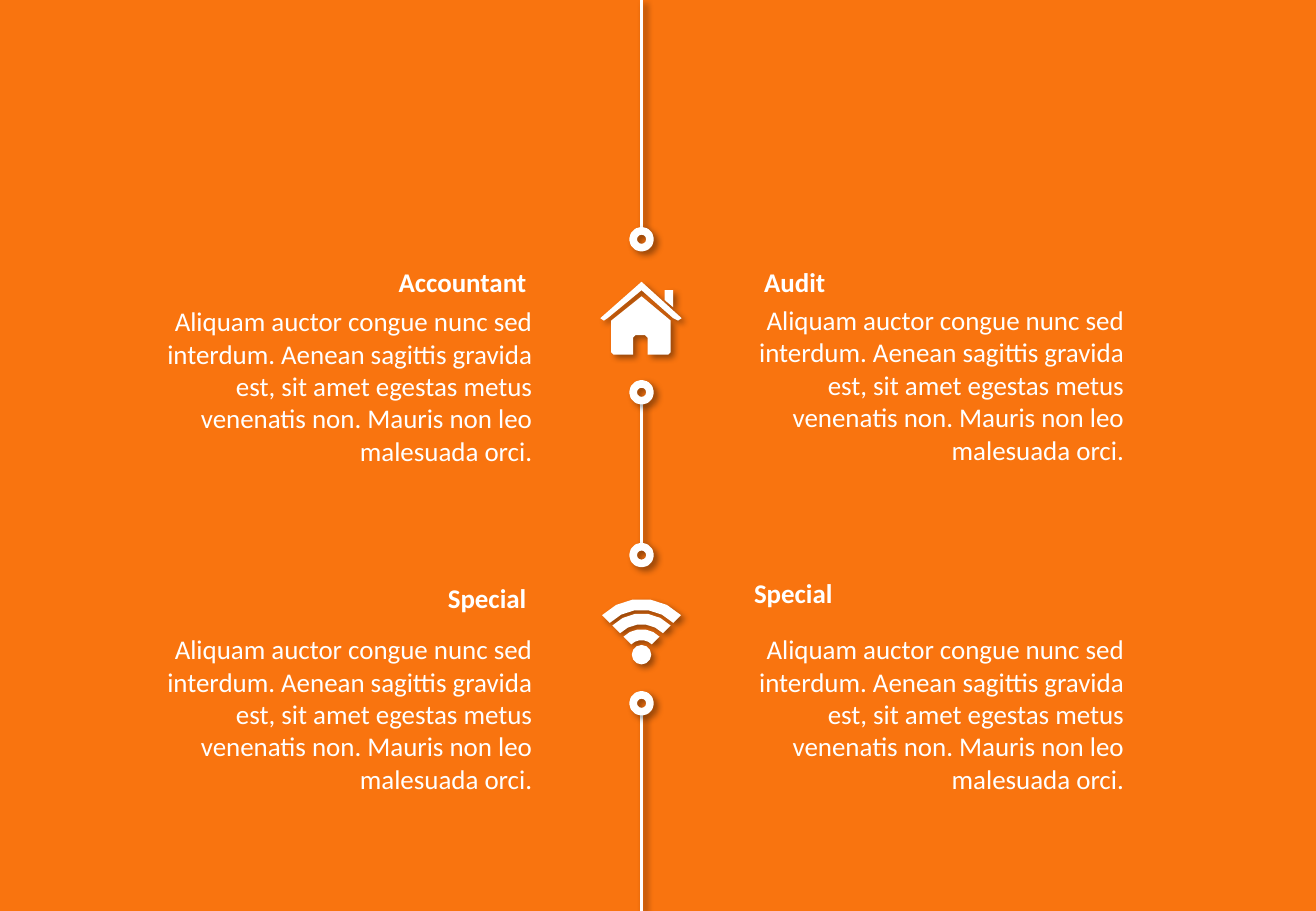
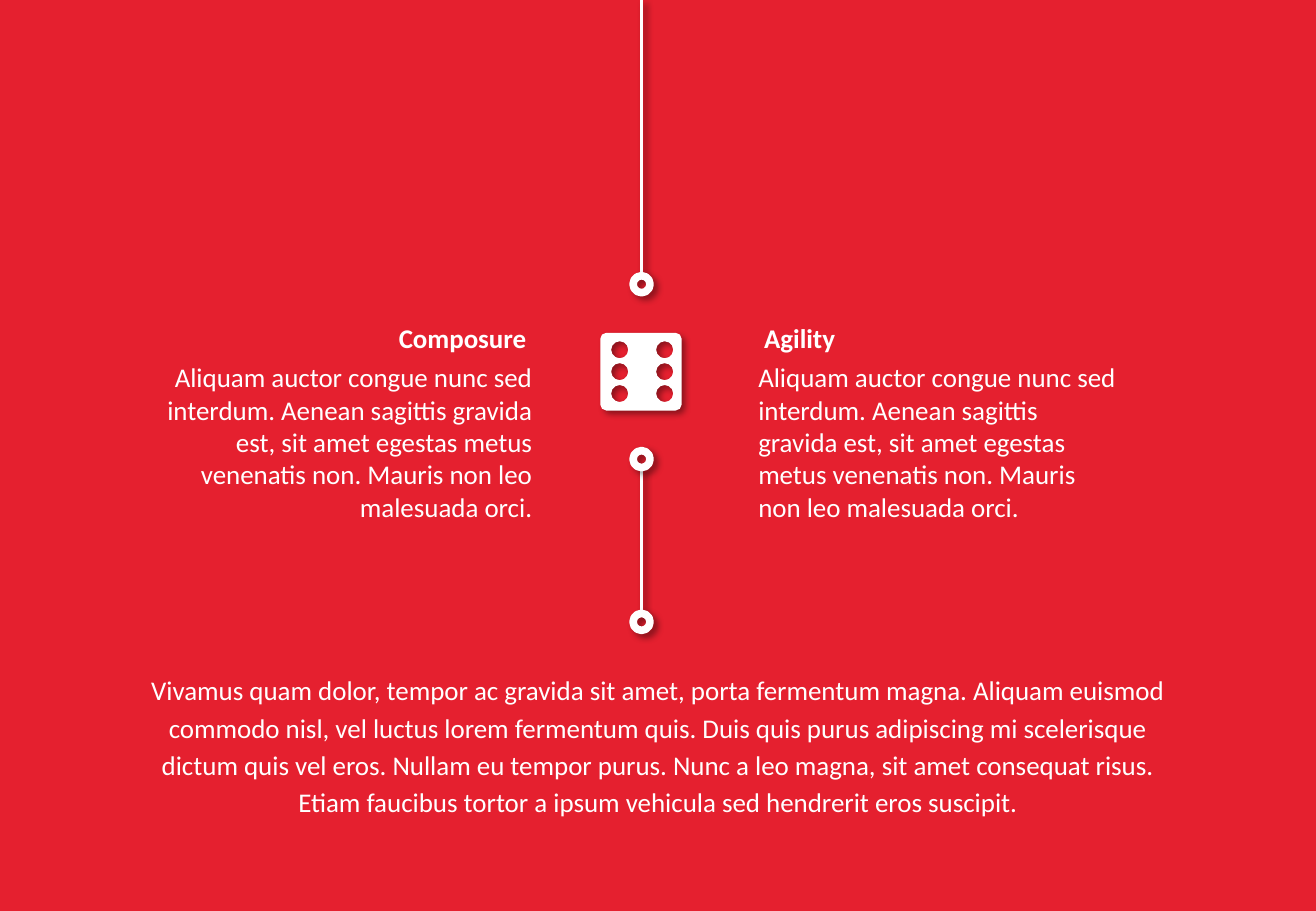
"""Build two coloured timeline slides with icons, headings and paragraphs."""
import dataclasses
import math

import lxml.etree
import pptx
import pptx.dml.color
import pptx.enum.shapes
import pptx.enum.text
import pptx.oxml.ns
import pptx.shapes.base
import pptx.slide
import pptx.util

Inches = pptx.util.Inches
Align = pptx.enum.text.PP_ALIGN
Point = tuple[float, float]
Contour = list[Point]

COLOURS = {"orange": "F9740F", "red": "E5202F", "white": "FFFFFF", "shadow": "000000"}
FONT = "Calibri"
FONT_SIZE = 16
AXIS = 5.28
RING = 0.14
LEFT_BODY, LEFT_HEADING, RIGHT = 1.31, 3.09, 6.19
LOREM = (
    "Aliquam auctor congue nunc sed interdum. Aenean sagittis gravida est, "
    "sit amet egestas metus venenatis non. Mauris non leo malesuada orci."
)
CLOSING = (
    "Vivamus quam dolor, tempor ac gravida sit amet, porta fermentum magna. "
    "Aliquam euismod commodo nisl, vel luctus lorem fermentum quis. "
    "Duis quis purus adipiscing mi scelerisque dictum quis vel eros. "
    "Nullam eu tempor purus. Nunc a leo magna, sit amet consequat risus. "
    "Etiam faucibus tortor a ipsum vehicula sed hendrerit eros suscipit."
)


@dataclasses.dataclass(frozen=True)
class TextBlock:
    text: str
    left: float
    top: float
    width: float
    height: float
    align: Align = Align.RIGHT
    bold: bool = False
    insets: Point = (0.05, 0.03)
    line_spacing: float | None = None
    space_after: float | None = None


@dataclasses.dataclass(frozen=True)
class Segment:
    top: float
    bottom: float
    ring_above: bool = True
    ring_below: bool = True


@dataclasses.dataclass(frozen=True)
class Timeline:
    background: str
    segments: list[Segment]
    icons: list[list[Contour]]
    blocks: list[TextBlock]


def heading(text: str, left: float, top: float, align: Align = Align.RIGHT) -> TextBlock:
    return TextBlock(text, left, top, 1.34, 0.37, align, bold=True, insets=(0.1, 0.05))


def body(left: float, top: float, width: float = 3.12, align: Align = Align.RIGHT) -> TextBlock:
    return TextBlock(LOREM, left, top, width, 1.4, align)


def arc(x: float, y: float, radius: float, start: float, end: float, steps: int) -> Contour:
    angles = [math.radians(start + (end - start) * step / steps) for step in range(steps + 1)]
    return [(x + radius * math.cos(angle), y + radius * math.sin(angle)) for angle in angles]


def circle(x: float, y: float, radius: float) -> Contour:
    return arc(x, y, radius, 360, 0, 12)[:-1]


def band(x: float, y: float, outer: float, inner: float) -> Contour:
    return arc(x, y, outer, -135, -45, 5) + arc(x, y, inner, -45, -135, 5)


def house() -> list[Contour]:
    walls = [
        (5.03, 2.64), (5.28, 2.44), (5.52, 2.64), (5.52, 2.9), (5.5, 2.92), (5.33, 2.92),
        (5.33, 2.78), (5.31, 2.76), (5.23, 2.76), (5.21, 2.78), (5.21, 2.92), (5.05, 2.92),
        (5.03, 2.9),
    ]
    chimney = [(5.47, 2.39), (5.54, 2.39), (5.54, 2.53), (5.47, 2.47)]
    roof = [
        (4.94, 2.62), (4.97, 2.64), (5, 2.62), (5.28, 2.39), (5.54, 2.62), (5.58, 2.64),
        (5.61, 2.62), (5.28, 2.32),
    ]
    return [walls, chimney, roof]


def wireless() -> list[Contour]:
    y = 5.39
    radii = [(0.46, 0.37), (0.34, 0.25), (0.21, 0.12)]
    return [circle(AXIS, y, 0.08)] + [band(AXIS, y, outer, inner) for outer, inner in radii]


def die() -> list[Contour]:
    left, top, right, bottom, radius = 4.94, 2.74, 5.61, 3.38, 0.05
    corners = [
        (right - radius, bottom - radius), (left + radius, bottom - radius),
        (left + radius, top + radius), (right - radius, top + radius),
    ]
    outline = [
        point
        for index, (x, y) in enumerate(corners)
        for point in arc(x, y, radius, 90 * index, 90 * index + 90, 2)
    ]
    pips = [circle(x, y, 0.07) for x in (5.1, 5.47) for y in (2.88, 3.06, 3.24)]
    return [outline] + pips


def add_shadow(shape: pptx.shapes.base.BaseShape) -> None:
    qn = pptx.oxml.ns.qn
    effects = lxml.etree.SubElement(shape.element.spPr, qn("a:effectLst"))
    shadow = lxml.etree.SubElement(
        effects, qn("a:outerShdw"), blurRad=str(pptx.util.Pt(4)), dist=str(pptx.util.Pt(3)),
        dir="2700000", algn="tl", rotWithShape="0",
    )
    colour = lxml.etree.SubElement(shadow, qn("a:srgbClr"), val=COLOURS["shadow"])
    lxml.etree.SubElement(colour, qn("a:alpha"), val="40000")


def rgb(name: str) -> pptx.dml.color.RGBColor:
    return pptx.dml.color.RGBColor.from_string(COLOURS[name])


def add_segment(page: pptx.slide.Slide, segment: Segment) -> None:
    group = page.shapes.add_group_shape()
    line = group.shapes.add_connector(
        pptx.enum.shapes.MSO_CONNECTOR.STRAIGHT,
        Inches(AXIS), Inches(segment.top), Inches(AXIS), Inches(segment.bottom),
    )
    line.line.color.rgb = rgb("white")
    line.line.width = pptx.util.Pt(2.25)
    add_shadow(line)
    rings = [(segment.ring_above, segment.top - RING), (segment.ring_below, segment.bottom)]
    for shown, top in rings:
        if shown:
            ring = group.shapes.add_shape(
                pptx.enum.shapes.MSO_SHAPE.OVAL,
                Inches(AXIS - RING / 2), Inches(top), Inches(RING), Inches(RING),
            )
            ring.fill.background()
            ring.line.color.rgb = rgb("white")
            ring.line.width = pptx.util.Pt(4.5)
            add_shadow(ring)


def add_icon(page: pptx.slide.Slide, contours: list[Contour]) -> None:
    outlines = [[(Inches(x), Inches(y)) for x, y in contour] for contour in contours]
    builder = page.shapes.build_freeform(*outlines[0][0])
    builder.add_line_segments(outlines[0][1:], close=True)
    for outline in outlines[1:]:
        builder.move_to(*outline[0])
        builder.add_line_segments(outline[1:], close=True)
    icon = builder.convert_to_shape()
    icon.fill.solid()
    icon.fill.fore_color.rgb = rgb("white")
    icon.line.fill.background()
    add_shadow(icon)


def add_text(page: pptx.slide.Slide, block: TextBlock) -> None:
    box = page.shapes.add_textbox(
        Inches(block.left), Inches(block.top), Inches(block.width), Inches(block.height)
    )
    frame = box.text_frame
    frame.word_wrap = True
    frame.auto_size = pptx.enum.text.MSO_AUTO_SIZE.SHAPE_TO_FIT_TEXT
    frame.margin_left = frame.margin_right = Inches(block.insets[0])
    frame.margin_top = frame.margin_bottom = Inches(block.insets[1])
    para = frame.paragraphs[0]
    para.alignment = block.align
    if block.line_spacing is not None:
        para.line_spacing = block.line_spacing
    if block.space_after is not None:
        para.space_after = pptx.util.Pt(block.space_after)
    span = para.add_run()
    span.text = block.text
    span.font.name = FONT
    span.font.size = pptx.util.Pt(FONT_SIZE)
    span.font.bold = block.bold
    span.font.color.rgb = rgb("white")


TIMELINES = [
    Timeline(
        "orange",
        [
            Segment(0, 1.9, ring_above=False),
            Segment(3.3, 4.5),
            Segment(5.86, 7.5, ring_below=False),
        ],
        [house(), wireless()],
        [
            heading("Accountant", LEFT_HEADING, 2.14),
            body(LEFT_BODY, 2.48),
            heading("Audit", RIGHT, 2.14, Align.LEFT),
            body(RIGHT, 2.47, 3.11),
            heading("Special", LEFT_HEADING, 4.74),
            body(LEFT_BODY, 5.18),
            heading("Special", 5.61, 4.7),
            body(RIGHT, 5.18, 3.11),
        ],
    ),
    Timeline(
        "red",
        [Segment(0, 2.27, ring_above=False), Segment(3.85, 5.05)],
        [die()],
        [
            heading("Composure", LEFT_HEADING, 2.6),
            body(LEFT_BODY, 2.94),
            heading("Agility", RIGHT, 2.6, Align.LEFT),
            body(RIGHT, 2.94, 3.09, Align.LEFT),
            TextBlock(
                CLOSING, 0.97, 5.46, 8.89, 1.31, Align.CENTER,
                insets=(0.1, 0.05), line_spacing=1.15, space_after=8.1,
            ),
        ],
    ),
]


def main() -> None:
    deck = pptx.Presentation()
    deck.slide_width, deck.slide_height = Inches(10.83), Inches(7.5)
    for timeline in TIMELINES:
        page = deck.slides.add_slide(deck.slide_layouts.get_by_name("Blank"))
        page.background.fill.solid()
        page.background.fill.fore_color.rgb = rgb(timeline.background)
        for segment in timeline.segments:
            add_segment(page, segment)
        for contours in timeline.icons:
            add_icon(page, contours)
        for block in timeline.blocks:
            add_text(page, block)
    deck.save("out.pptx")


if __name__ == "__main__":
    main()
